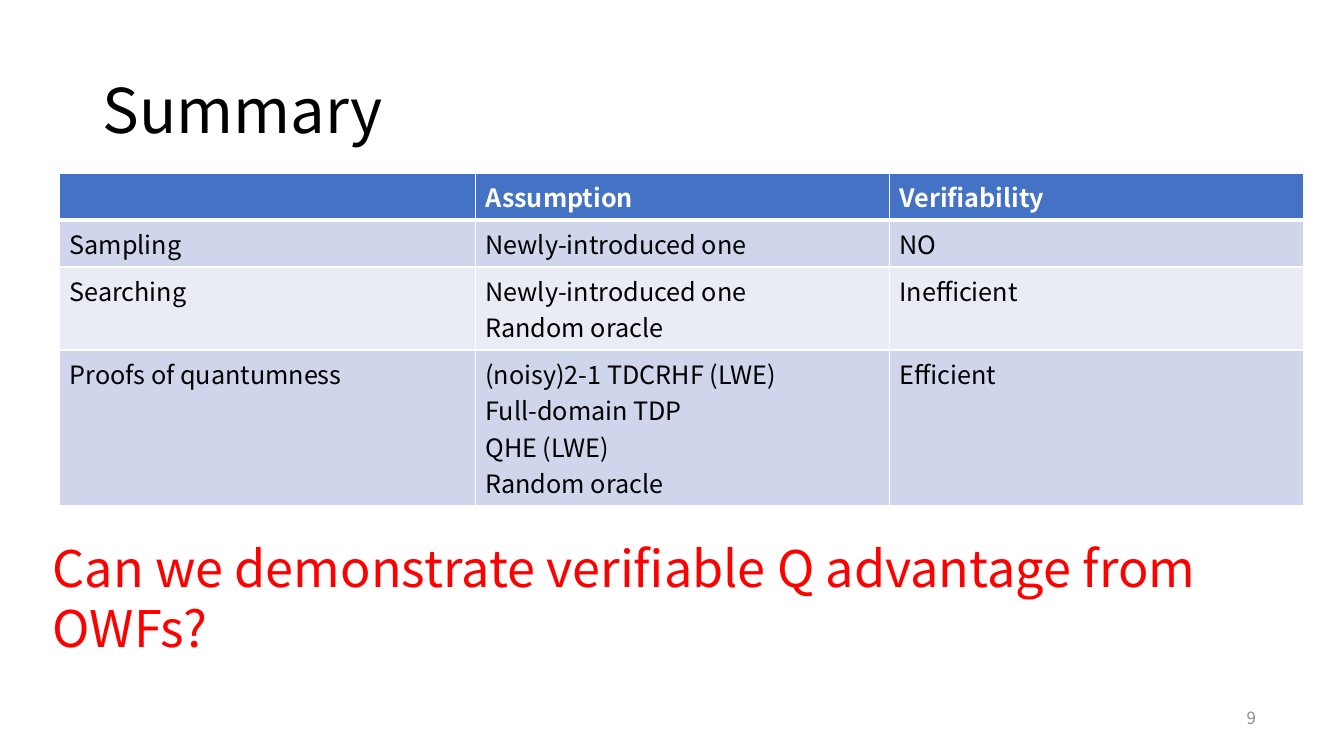
import pptx
import pptx.util
import pptx.dml.color
import pptx.enum.text
import pptx.oxml
import pptx.oxml.ns

Cm = pptx.util.Cm
Pt = pptx.util.Pt
RGBColor = pptx.dml.color.RGBColor
ALIGN = pptx.enum.text.PP_ALIGN
ANCHOR = pptx.enum.text.MSO_ANCHOR

TITLE = "Summary"
QUESTION = "Can we demonstrate verifiable Q advantage from OWFs?"
PAGE_NUMBER = "9"
ROWS = [
    ("", "Assumption", "Verifiability"),
    ("Sampling", "Newly-introduced one", "NO"),
    ("Searching", "Newly-introduced one\nRandom oracle", "Inefficient"),
    ("Proofs of quantumness",
     "(noisy)2-1 TDCRHF (LWE)\nFull-domain TDP\nQHE (LWE)\nRandom oracle",
     "Efficient"),
]
COLUMN_WIDTHS = [10.48, 10.43, 10.45]
ROW_HEIGHTS = [1.18, 1.18, 2.09, 3.92]

FONT = "Noto Sans CJK JP"
BLACK = RGBColor(0x00, 0x00, 0x00)
WHITE = RGBColor(0xFF, 0xFF, 0xFF)
RED = RGBColor(0xFF, 0x00, 0x00)
GRAY = RGBColor(0x8C, 0x8C, 0x8C)
HEADER_BLUE = RGBColor(0x44, 0x72, 0xC4)
BANDS = [RGBColor(0xE9, 0xEB, 0xF5), RGBColor(0xCF, 0xD5, 0xEA)]


def write(frame, text, size, color, bold=False, align=ALIGN.LEFT):
    frame.text = text
    for paragraph in frame.paragraphs:
        paragraph.alignment = align
        paragraph.font.name = FONT
        paragraph.font.size = Pt(size)
        paragraph.font.bold = bold
        paragraph.font.color.rgb = color


def add_borders(cell, bottom_width, top_width):
    properties = cell._tc.get_or_add_tcPr()
    widths = {"lnL": 1, "lnR": 1, "lnT": top_width, "lnB": bottom_width}
    for index, (side, width) in enumerate(widths.items()):
        properties.insert(index, pptx.oxml.parse_xml(
            f'<a:{side} {pptx.oxml.ns.nsdecls("a")} w="{Pt(width)}">'
            f'<a:solidFill><a:srgbClr val="{WHITE}"/></a:solidFill></a:{side}>'))


def add_text(slide, box, text, size, color, anchor=ANCHOR.TOP, align=ALIGN.LEFT):
    frame = slide.shapes.add_textbox(*map(Cm, box)).text_frame
    frame.word_wrap = True
    frame.vertical_anchor = anchor
    write(frame, text, size, color, align=align)


def add_summary_table(slide):
    table = slide.shapes.add_table(
        len(ROWS), len(COLUMN_WIDTHS), Cm(1.5), Cm(4.37),
        Cm(sum(COLUMN_WIDTHS)), Cm(sum(ROW_HEIGHTS))).table
    for column, width in zip(table.columns, COLUMN_WIDTHS):
        column.width = Cm(width)
    for row_index, (row, texts) in enumerate(zip(table.rows, ROWS)):
        row.height = Cm(ROW_HEIGHTS[row_index])
        header = row_index == 0
        for cell, text in zip(row.cells, texts):
            write(cell.text_frame, text, 18, WHITE if header else BLACK, bold=header)
            cell.fill.solid()
            cell.fill.fore_color.rgb = HEADER_BLUE if header else BANDS[row_index % 2]
            add_borders(cell, 3 if header else 1, 3 if row_index == 1 else 1)


def main():
    presentation = pptx.Presentation()
    presentation.slide_width = Cm(33.87)
    presentation.slide_height = Cm(19.05)
    slide = presentation.slides.add_slide(presentation.slide_layouts[5])

    title = slide.shapes.title
    title.left, title.top, title.width, title.height = map(Cm, (2.33, 1.01, 29.21, 3.68))
    title.text_frame.vertical_anchor = ANCHOR.MIDDLE
    write(title.text_frame, TITLE, 44, BLACK)
    title.text_frame.paragraphs[0].line_spacing = 0.9

    add_text(slide, (24.28, 17.58, 7.62, 1.01), PAGE_NUMBER, 12, GRAY,
             anchor=ANCHOR.MIDDLE, align=ALIGN.RIGHT)
    add_summary_table(slide)
    add_text(slide, (1.08, 13.41, 31.7, 3.33), QUESTION, 36, RED)
    presentation.save("out.pptx")


if __name__ == "__main__":
    main()
